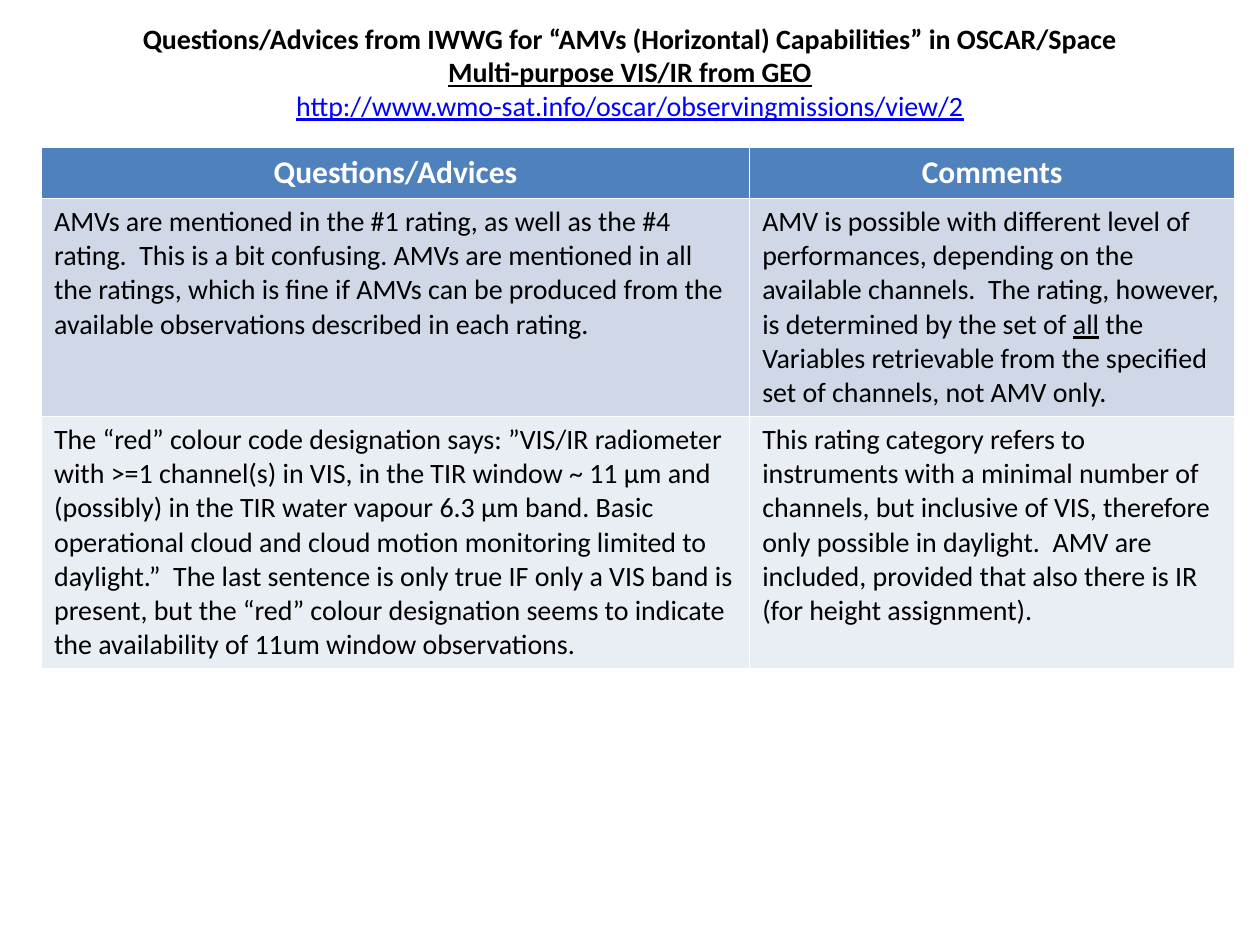
from pptx import Presentation
from pptx.dml.color import RGBColor
from pptx.enum import text
from pptx.util import Inches, Pt

BLACK = RGBColor(0x00, 0x00, 0x00)
WHITE = RGBColor(0xFF, 0xFF, 0xFF)
LINK_BLUE = RGBColor(0x00, 0x00, 0xFF)
HEADER_BLUE = RGBColor(0x4F, 0x81, 0xBD)
BAND_DARK = RGBColor(0xD0, 0xD8, 0xE8)
BAND_LIGHT = RGBColor(0xE9, 0xED, 0xF4)


def add_run(paragraph, words, color=BLACK, **font_format):
    run = paragraph.add_run()
    run.text = words
    run.font.color.rgb = color
    values = {"name": "Calibri", "size": Pt(16), "bold": False, **font_format}
    for name, value in values.items():
        setattr(run.font, name, value)


presentation = Presentation()
presentation.slide_width = Inches(10)
presentation.slide_height = Inches(7.5)
slide = presentation.slides.add_slide(presentation.slide_layouts[5])

# Title
title = slide.shapes.title
title.left, title.top = Inches(0.5), Inches(0.02)
title.width, title.height = Inches(9), Inches(1.1)
title.text_frame.auto_size = text.MSO_AUTO_SIZE.NONE
title.text_frame.vertical_anchor = text.MSO_ANCHOR.MIDDLE
heading = title.text_frame.paragraphs[0]
heading.alignment = text.PP_ALIGN.CENTER
add_run(heading, "Questions/Advices from IWWG for “AMVs (Horizontal) Capabilities” in OSCAR/Space",
        bold=True)
heading.add_line_break()
add_run(heading, "Multi-purpose VIS/IR from GEO", bold=True, underline=True)
heading.add_line_break()
add_run(heading, "http://www.wmo-sat.info/oscar/observingmissions/view/2",
        LINK_BLUE, underline=True)

# Table: each cell is a list of text pieces, every second piece underlined
rows = [
    (0.39, HEADER_BLUE, [["Questions/Advices"], ["Comments"]]),
    (1.73, BAND_DARK, [
        ["AMVs are mentioned in the #1 rating, as well as the #4 rating.  This is a bit "
         "confusing. AMVs are mentioned in all the ratings, which is fine if AMVs can be "
         "produced from the available observations described in each rating."],
        ["AMV is possible with different level of performances, depending on the available "
         "channels.  The rating, however, is determined by the set of ",
         "all",
         " the Variables retrievable from the specified set of channels, not AMV only."],
    ]),
    (2, BAND_LIGHT, [
        ["The “red” colour code designation says: ”VIS/IR radiometer with >=1 channel(s) in "
         "VIS, in the TIR window ~ 11 μm and (possibly) in the TIR water vapour 6.3 μm band. "
         "Basic operational cloud and cloud motion monitoring limited to daylight.”  The last "
         "sentence is only true IF only a VIS band is present, but the “red” colour "
         "designation seems to indicate the availability of 11um window observations."],
        ["This rating category refers to instruments with a minimal number of channels, but "
         "inclusive of VIS, therefore only possible in daylight.  AMV are included, provided "
         "that also there is IR (for height assignment)."],
    ]),
]
column_widths = [5.62, 3.85]
table = slide.shapes.add_table(
    len(rows), len(column_widths), Inches(0.33), Inches(1.17),
    Inches(sum(column_widths)), Inches(sum(row[0] for row in rows))).table
for column, width in zip(table.columns, column_widths):
    column.width = Inches(width)

for row_index, (height, fill_color, cell_texts) in enumerate(rows):
    table.rows[row_index].height = Inches(height)
    is_header = row_index == 0
    for column_index, pieces in enumerate(cell_texts):
        cell = table.cell(row_index, column_index)
        cell.fill.solid()
        cell.fill.fore_color.rgb = fill_color
        paragraph = cell.text_frame.paragraphs[0]
        if is_header:
            paragraph.alignment = text.PP_ALIGN.CENTER
            add_run(paragraph, pieces[0], WHITE, size=Pt(18), bold=True)
            continue
        for piece_index, piece in enumerate(pieces):
            add_run(paragraph, piece, underline=piece_index % 2 == 1)

presentation.save("out.pptx")
